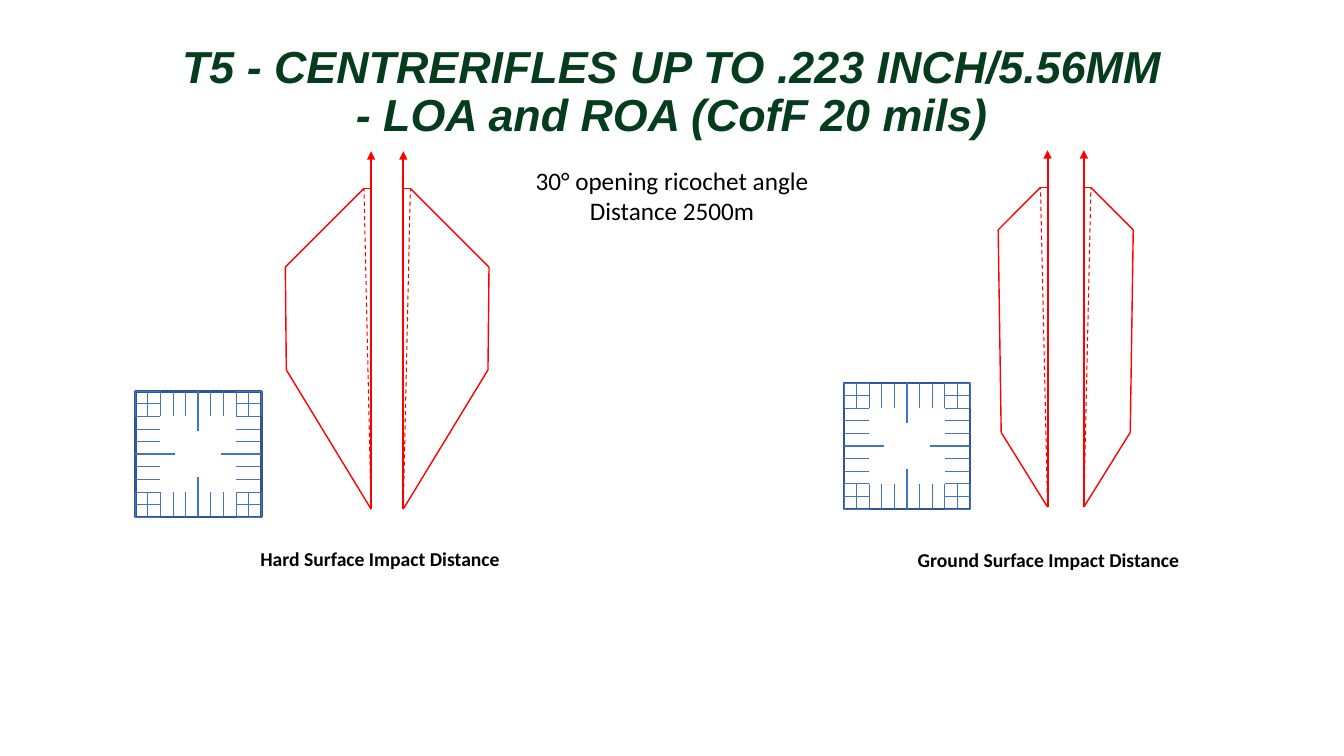
from lxml.etree import SubElement
from pptx import Presentation
from pptx.dml.color import RGBColor
from pptx.enum.dml import MSO_LINE
from pptx.enum.shapes import MSO_CONNECTOR, MSO_SHAPE
from pptx.enum.text import MSO_ANCHOR, PP_ALIGN
from pptx.oxml.ns import qn
from pptx.util import Inches, Pt


def color(value):
    return RGBColor.from_string(value)


class RangeSlide:
    RED = "FF0000"
    BLUE = "4472C4"
    FRAME = "325491"
    GREEN = "053C1E"
    BLACK = "000000"

    def __init__(self, prs):
        self.s = prs.slides.add_slide(prs.slide_layouts[6])

    def text(self, box, text, size, font="Calibri", fill=BLACK, bold=False,
             italic=False, spacing=None, anchor=MSO_ANCHOR.TOP):
        sp = self.s.shapes.add_textbox(*map(Inches, box))
        tf = sp.text_frame
        tf.word_wrap = True
        tf.vertical_anchor = anchor
        tf.text = text
        for p in tf.paragraphs:
            p.alignment = PP_ALIGN.CENTER
            p.line_spacing = spacing
            for r in p.runs:
                r.font.name = font
                r.font.size = Pt(size)
                r.font.bold = bold
                r.font.italic = italic
                r.font.color.rgb = color(fill)

    def line(self, group, start, end, stroke, width, dash=None, arrow=False):
        sp = group.shapes.add_connector(
            MSO_CONNECTOR.STRAIGHT, *map(Inches, (*start, *end)))
        sp.line.color.rgb = color(stroke)
        sp.line.width = Pt(width)
        if dash:
            sp.line.dash_style = dash
        if arrow:
            SubElement(sp.line._get_or_add_ln(), qn("a:tailEnd"), type="triangle")
        SubElement(sp._element.spPr, qn("a:effectLst"))

    def target(self, group, left, top, side=1.25):
        sp = group.shapes.add_shape(
            MSO_SHAPE.RECTANGLE, *map(Inches, (left, top, side, side)))
        sp.shadow.inherit = False
        sp.fill.background()
        sp.line.color.rgb = color(self.FRAME)
        sp.line.width = Pt(2)
        right, bottom = left + side, top + side
        for i in range(11):
            length, width = (0.4, 1.75) if i == 5 else (0.25, 0.5)
            x, y = left + i * side / 10, top + i * side / 10
            for start, end in (
                ((left, y), (left + length, y)),
                ((right, y), (right - length, y)),
                ((x, top), (x, top + length)),
                ((x, bottom), (x, bottom - length)),
            ):
                self.line(group, start, end, self.BLUE, width)

    def danger_area(self, group, axis, direction, levels, offsets):
        tip, top, shoulder, waist, base = levels
        inner, wide, low = (axis + direction * d for d in offsets)
        self.line(group, (axis, base), (axis, tip), self.RED, 1.5, arrow=True)
        self.line(group, (axis, base), (inner, top), self.RED, 0.75,
                  dash=MSO_LINE.DASH)
        outline = [(axis, top), (inner, top), (wide, shoulder), (low, waist),
                   (axis, base)]
        for start, end in zip(outline, outline[1:]):
            self.line(group, start, end, self.RED, 1)

    def diagram(self, corner, axes, levels, offsets):
        group = self.s.shapes.add_group_shape()
        self.target(group, *corner)
        for axis, direction in zip(axes, (-1, 1)):
            self.danger_area(group, axis, direction, levels, offsets)


def main():
    prs = Presentation()
    prs.slide_width = Inches(13.33)
    prs.slide_height = Inches(7.5)
    slide = RangeSlide(prs)
    slide.text((1.88, 5.38, 3.78, 0.34), "Hard Surface Impact Distance", 14,
               bold=True)
    slide.text((8.51, 5.39, 3.78, 0.57), "Ground Surface Impact Distance", 14,
               bold=True)
    slide.text((0, 0.43, 13.33, 0.98),
               "T5 - CENTRERIFLES UP TO .223 INCH/5.56MM\n"
               "- LOA and ROA (CofF 20 mils)",
               32, font="Arial", fill=slide.GREEN, bold=True, italic=True,
               spacing=0.9, anchor=MSO_ANCHOR.MIDDLE)
    slide.diagram((1.34, 3.88), (3.68, 4.0), (1.5, 1.87, 2.65, 3.67, 5.05),
                  (0.07, 0.85, 0.84))
    slide.diagram((8.37, 3.8), (10.39, 10.75), (1.49, 1.86, 2.28, 4.29, 5.03),
                  (0.07, 0.49, 0.46))
    slide.text((4.62, 1.59, 4.09, 0.71),
               "30° opening ricochet angle\nDistance 2500m", 18)
    prs.save("out.pptx")


if __name__ == "__main__":
    main()
